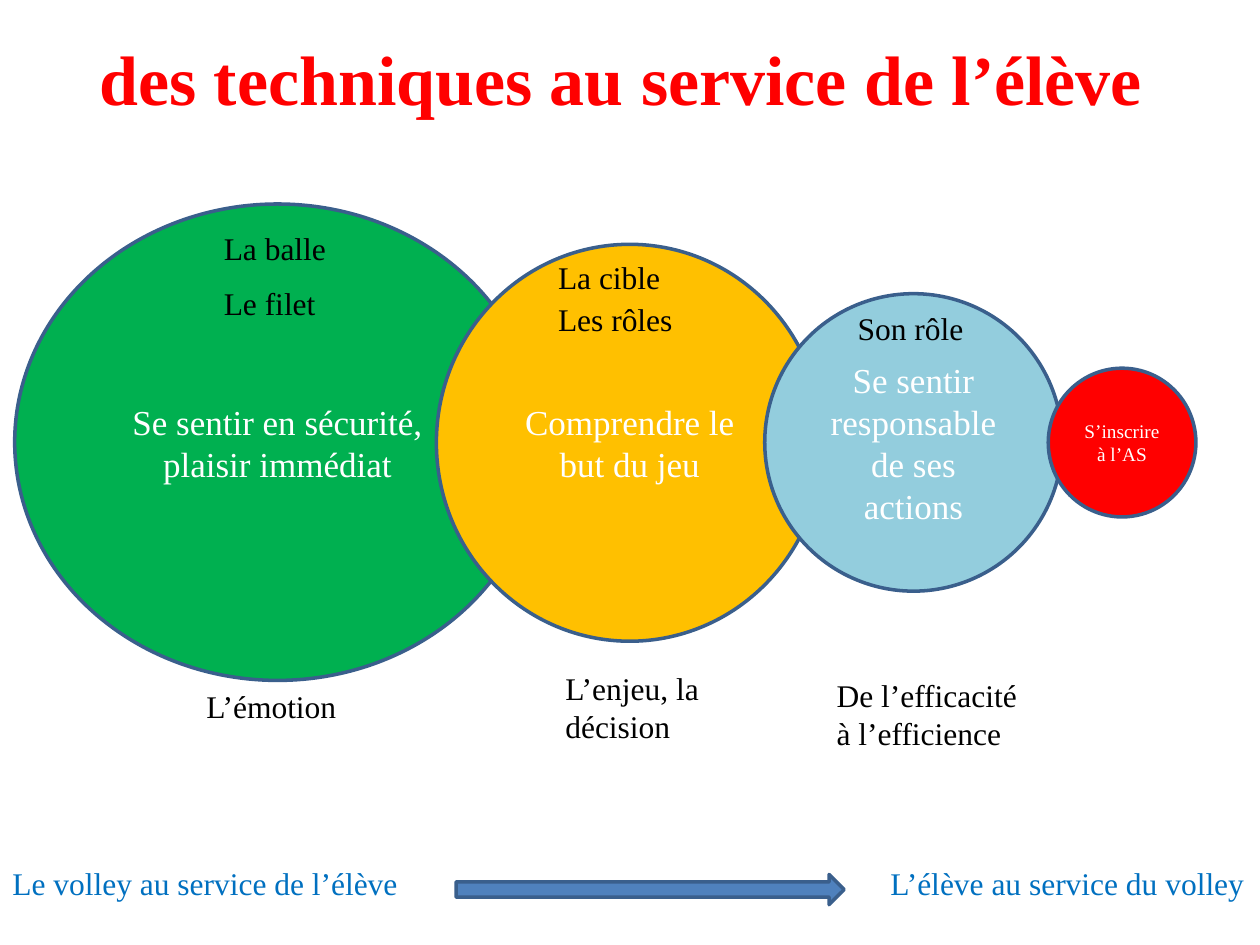
from typing import NamedTuple

from pptx import Presentation
from pptx.dml.color import RGBColor
from pptx.enum import shapes, text
from pptx.util import Pt

FONT = "Times New Roman"
WHITE = RGBColor(0xFF, 0xFF, 0xFF)
BLACK = RGBColor(0x00, 0x00, 0x00)
GREEN = RGBColor(0x00, 0xB0, 0x50)
AMBER = RGBColor(0xFF, 0xC0, 0x00)
SKY = RGBColor(0x93, 0xCD, 0xDD)
RED = RGBColor(0xFF, 0x00, 0x00)
BLUE = RGBColor(0x00, 0x70, 0xC0)
STEEL = RGBColor(0x4F, 0x81, 0xBD)
EDGE = RGBColor(0x3A, 0x5F, 0x8C)


class Box(NamedTuple):
    left: float
    top: float
    width: float
    height: float


class Stage(NamedTuple):
    box: Box
    fill: RGBColor
    words: str
    size: float = 20


class Label(NamedTuple):
    box: Box
    words: str
    color: RGBColor = BLACK
    size: float = 18
    bold: bool = False


# Circles, from the first feeling to the school club
STAGES = [
    Stage(Box(8.4, 116.6, 300.4, 272.2), GREEN,
          "Se sentir en sécurité,\nplaisir immédiat"),
    Stage(Box(249.4, 139.6, 221, 226.8), AMBER, "Comprendre le but du jeu"),
    Stage(Box(437, 167.8, 170, 170), SKY,
          "Se sentir responsable de ses actions"),
    Stage(Box(599, 210.4, 84.4, 85), RED, "S’inscrire à l’AS", 11),
]

ROW = 29  # height of a one-line label
PAIR = 51  # height of a two-line label
WIDE = 98.6  # width of a short label
BASE = 490.4  # top of the labels beside the arrow

LABELS = [
    # Ends of the arrow
    Label(Box(0, BASE, 249, ROW), "Le volley au service de l’élève", BLUE),
    Label(Box(501.8, BASE, 218.2, ROW), "L’élève au service du volley", BLUE),
    # Below the circles
    Label(Box(110.8, 388.8, WIDE, ROW), "L’émotion"),
    Label(Box(316, 378.6, WIDE, PAIR), "L’enjeu, la décision"),
    Label(Box(471, 382.6, 128, PAIR), "De l’efficacité à l’efficience"),
    # Inside the circles
    Label(Box(120.8, 127.4, WIDE, ROW), "La balle"),
    Label(Box(120.8, 158.6, WIDE, ROW), "Le filet"),
    Label(Box(311.8, 144, WIDE, ROW), "La cible"),
    Label(Box(311.8, 168, WIDE, ROW), "Les rôles"),
    Label(Box(483, 173.2, WIDE, ROW), "Son rôle"),
    # Title
    Label(Box(49.7, 16.6, 623.5, 55.4),
          "des techniques au service de l’élève", RED, 40, True),
]
ARROW = Box(260.6, 499.7, 221.8, 17.3)


def write(shape, words: str, color: RGBColor, size: float,
          align, bold: bool = False) -> None:
    frame = shape.text_frame
    frame.word_wrap = True
    frame.text = words
    style = {"name": FONT, "size": Pt(size), "bold": bold}
    for para in frame.paragraphs:
        para.alignment = align
        for key, value in style.items():
            setattr(para.runs[0].font, key, value)
        para.runs[0].font.color.rgb = color


def draw(slide, kind, box: Box, fill: RGBColor):
    shape = slide.shapes.add_shape(kind, *map(Pt, box))
    shape.shadow.inherit = False
    shape.fill.solid()
    shape.fill.fore_color.rgb = fill
    shape.line.color.rgb = EDGE
    shape.line.width = Pt(2)
    return shape


def add_stage(slide, stage: Stage) -> None:
    shape = draw(slide, shapes.MSO_SHAPE.OVAL, stage.box, stage.fill)
    shape.text_frame.vertical_anchor = text.MSO_ANCHOR.MIDDLE
    write(shape, stage.words, WHITE, stage.size, text.PP_ALIGN.CENTER)


def add_label(slide, label: Label) -> None:
    shape = slide.shapes.add_textbox(*map(Pt, label.box))
    write(shape, label.words, label.color, label.size,
          text.PP_ALIGN.LEFT, label.bold)


def main() -> None:
    deck = Presentation()
    deck.slide_width, deck.slide_height = Pt(720), Pt(540)
    slide = deck.slides.add_slide(deck.slide_layouts[6])
    for stage in STAGES:
        add_stage(slide, stage)
    for label in LABELS:
        add_label(slide, label)
    draw(slide, shapes.MSO_SHAPE.RIGHT_ARROW, ARROW, STEEL)
    deck.save("out.pptx")


if __name__ == "__main__":
    main()
